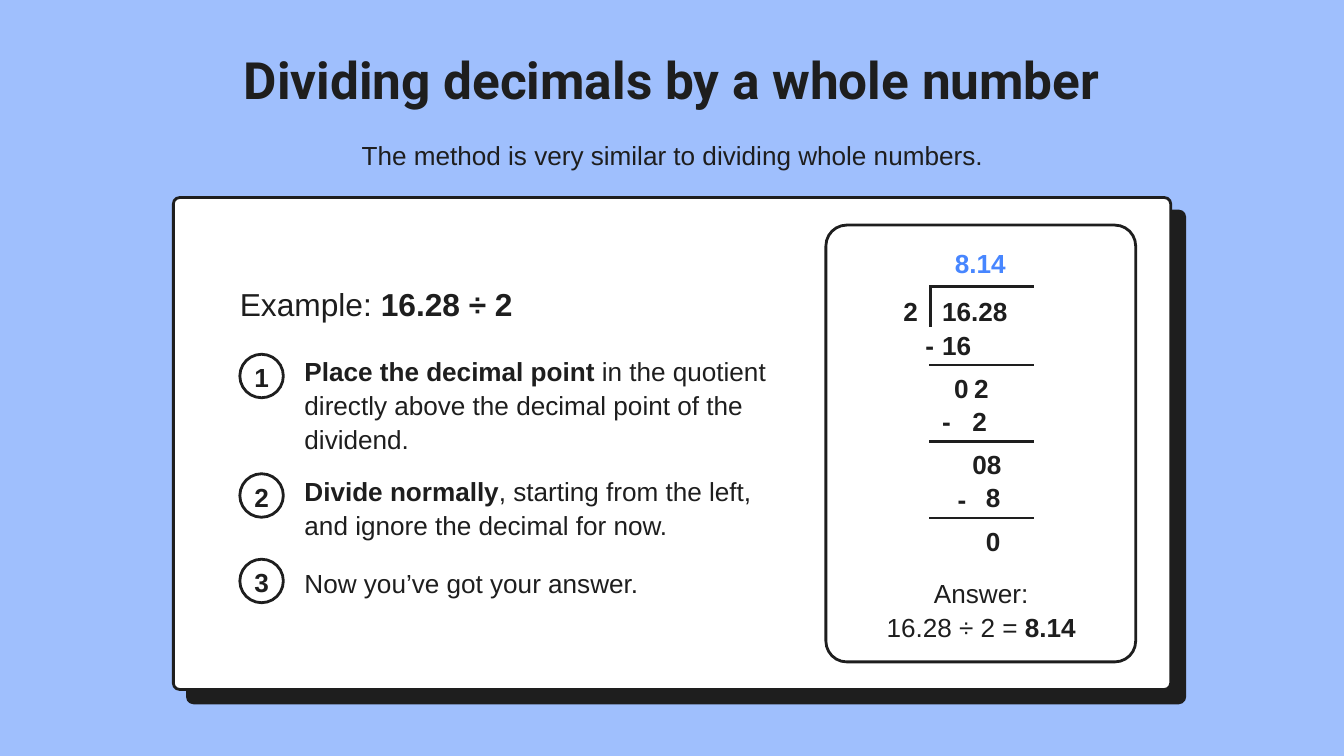
from dataclasses import dataclass

from lxml.etree import SubElement
from pptx import Presentation
from pptx.dml.color import RGBColor
from pptx.enum.shapes import MSO_CONNECTOR, MSO_SHAPE
from pptx.enum.text import MSO_ANCHOR, MSO_AUTO_SIZE, PP_ALIGN
from pptx.oxml.ns import qn
from pptx.util import Pt

INK, WHITE, SKY, BLUE = "1E1E1E", "FFFFFF", "9FBFFD", "4786FF"
STROKE = 3
BODY_SIZE, LINE_HEIGHT = 28, 36.4
BADGE_SIZE = 46.6
STEP_LEFT, STEP_TEXT_LEFT = 257, 326.2


@dataclass(frozen=True)
class Span:
    text: str
    bold: bool = False
    color: str = INK
    tracking: float = 0


@dataclass(frozen=True)
class Style:
    size: float = BODY_SIZE
    line_height: float = LINE_HEIGHT
    font: str = "Arial"
    align: PP_ALIGN = PP_ALIGN.LEFT


@dataclass(frozen=True)
class Step:
    badge_top: float
    text_top: float
    lines: int
    spans: tuple[Span, ...]


@dataclass(frozen=True)
class Digits:
    """One piece of the long division, placed by its top left corner."""
    text: str
    left: float
    top: float
    width: float
    color: str = INK
    tracking: float = 0
    align: PP_ALIGN = PP_ALIGN.LEFT


BODY = Style()
CENTRED = Style(align=PP_ALIGN.CENTER)

STEPS = (
    Step(379.6, 378, 3, (
        Span("Place the decimal point ", bold=True),
        Span("in the quotient directly above the decimal point of the dividend."))),
    Step(507.6, 506.2, 2, (
        Span("Divide normally", bold=True),
        Span(", starting from the left, and ignore the decimal for now."))),
    Step(599.2, 604.8, 1, (Span("Now you’ve got your answer."),)),
)

DIVISION = (
    Digits("8.14", 1023.1, 262.1, 75.6, color=BLUE),
    Digits("2", 961.9, 313.2, 21.6, align=PP_ALIGN.RIGHT),
    Digits("16.28", 1009.4, 313.2, 74.2),
    Digits("-", 991.4, 350, 60),
    Digits("16", 1009.4, 350, 60),
    Digits("02", 1022.4, 396, 60, tracking=5.9),
    Digits("-", 1009.4, 432, 60),
    Digits("2", 1041.8, 432, 42.5),
    Digits("08", 1041.8, 478.1, 39.6),
    Digits("-", 1026, 514.8, 60),
    Digits("8", 1056.2, 513.4, 34.6),
    Digits("0", 1056.2, 560.2, 51.8),
)
RULE_LEFT, RULE_RIGHT = 995.8, 1107.4
RULE_TOPS = (306.7, 391, 473, 555.1)


def rgb(color: str) -> RGBColor:
    return RGBColor.from_string(color)


def write(shape, paragraphs, style: Style, anchor=MSO_ANCHOR.TOP, wrap=True) -> None:
    """Fill a shape with paragraphs, each a sequence of spans."""
    frame = shape.text_frame
    frame.margin_left = frame.margin_top = frame.margin_right = frame.margin_bottom = 0
    frame.word_wrap = wrap
    frame.auto_size = MSO_AUTO_SIZE.NONE
    frame.vertical_anchor = anchor
    for index, spans in enumerate(paragraphs):
        para = frame.paragraphs[0] if index == 0 else frame.add_paragraph()
        para.alignment = style.align
        para.line_spacing = Pt(style.line_height)
        para.space_before = para.space_after = Pt(0)
        for span in spans:
            run = para.add_run()
            run.text = span.text
            run.font.name = style.font
            run.font.size = Pt(style.size)
            run.font.bold = span.bold
            run.font.color.rgb = rgb(span.color)
            if span.tracking:
                run.font._element.set("spc", str(round(span.tracking * 100)))


def add_text(page, left: float, top: float, width: float, height: float,
             paragraphs, style: Style = BODY) -> None:
    box = page.shapes.add_textbox(Pt(left), Pt(top), Pt(width), Pt(height))
    write(box, paragraphs, style)


def add_outlined(page, kind: MSO_SHAPE, left: float, top: float, width: float,
                 height: float, fill: str = WHITE, radius: float = 0):
    shape = page.shapes.add_shape(kind, Pt(left), Pt(top), Pt(width), Pt(height))
    shape.shadow.inherit = False
    shape.fill.solid()
    shape.fill.fore_color.rgb = rgb(fill)
    shape.line.color.rgb = rgb(INK)
    shape.line.width = Pt(STROKE)
    if radius:
        shape.adjustments[0] = radius / min(width, height)
    return shape


def add_rule(page, x1: float, y1: float, x2: float, y2: float) -> None:
    rule = page.shapes.add_connector(
        MSO_CONNECTOR.STRAIGHT, Pt(x1), Pt(y1), Pt(x2), Pt(y2))
    rule.line.color.rgb = rgb(INK)
    rule.line.width = Pt(STROKE)
    SubElement(rule._element.spPr, qn("a:effectLst"))


def add_step(page, number: int, step: Step) -> None:
    badge = add_outlined(page, MSO_SHAPE.OVAL, STEP_LEFT, step.badge_top,
                         BADGE_SIZE, BADGE_SIZE)
    write(badge, [[Span(str(number), bold=True)]], CENTRED, MSO_ANCHOR.MIDDLE, wrap=False)
    add_text(page, STEP_TEXT_LEFT, step.text_top, 503.3, step.lines * LINE_HEIGHT,
             [step.spans])


def add_division(page) -> None:
    for item in DIVISION:
        span = Span(item.text, True, item.color, item.tracking)
        add_text(page, item.left, item.top, item.width, LINE_HEIGHT, [[span]],
                 Style(align=item.align))
    for top in RULE_TOPS:
        add_rule(page, RULE_LEFT, top, RULE_RIGHT, top)
    add_rule(page, 997.2, 350, 997.2, 305.3)


def main() -> None:
    deck = Presentation()
    deck.slide_width, deck.slide_height = Pt(1440), Pt(810)
    page = deck.slides.add_slide(deck.slide_layouts[5])
    page.background.fill.solid()
    page.background.fill.fore_color.rgb = rgb(SKY)

    title = page.shapes.title
    title.left, title.top, title.width, title.height = Pt(113), Pt(51.1), Pt(1213.2), Pt(90)
    write(title, [[Span("Dividing decimals by a whole number", bold=True)]],
          Style(55, 66, "Roboto", PP_ALIGN.CENTER))
    add_text(page, 142.6, 146.9, 1154.9, LINE_HEIGHT,
             [[Span("The method is very similar to dividing whole numbers.")]], CENTRED)

    for left, top, fill in ((200.9, 226.1, INK), (185.8, 211.7, WHITE)):
        add_outlined(page, MSO_SHAPE.ROUNDED_RECTANGLE, left, top, 1068.5, 527, fill, 6.6)
    add_outlined(page, MSO_SHAPE.ROUNDED_RECTANGLE, 884.9, 241.2, 331.9, 468, radius=22.3)

    add_text(page, STEP_LEFT, 301.7, 401.8, 44.2,
             [[Span("Example: "), Span("16.28 ÷ 2", bold=True)]], Style(34, 44.2))
    for number, step in enumerate(STEPS, 1):
        add_step(page, number, step)

    add_division(page)
    add_text(page, 924.5, 615.6, 253.4, 2 * LINE_HEIGHT,
             [[Span("Answer:")], [Span("16.28 ÷ 2 = "), Span("8.14", bold=True)]], CENTRED)
    deck.save("out.pptx")


if __name__ == "__main__":
    main()
